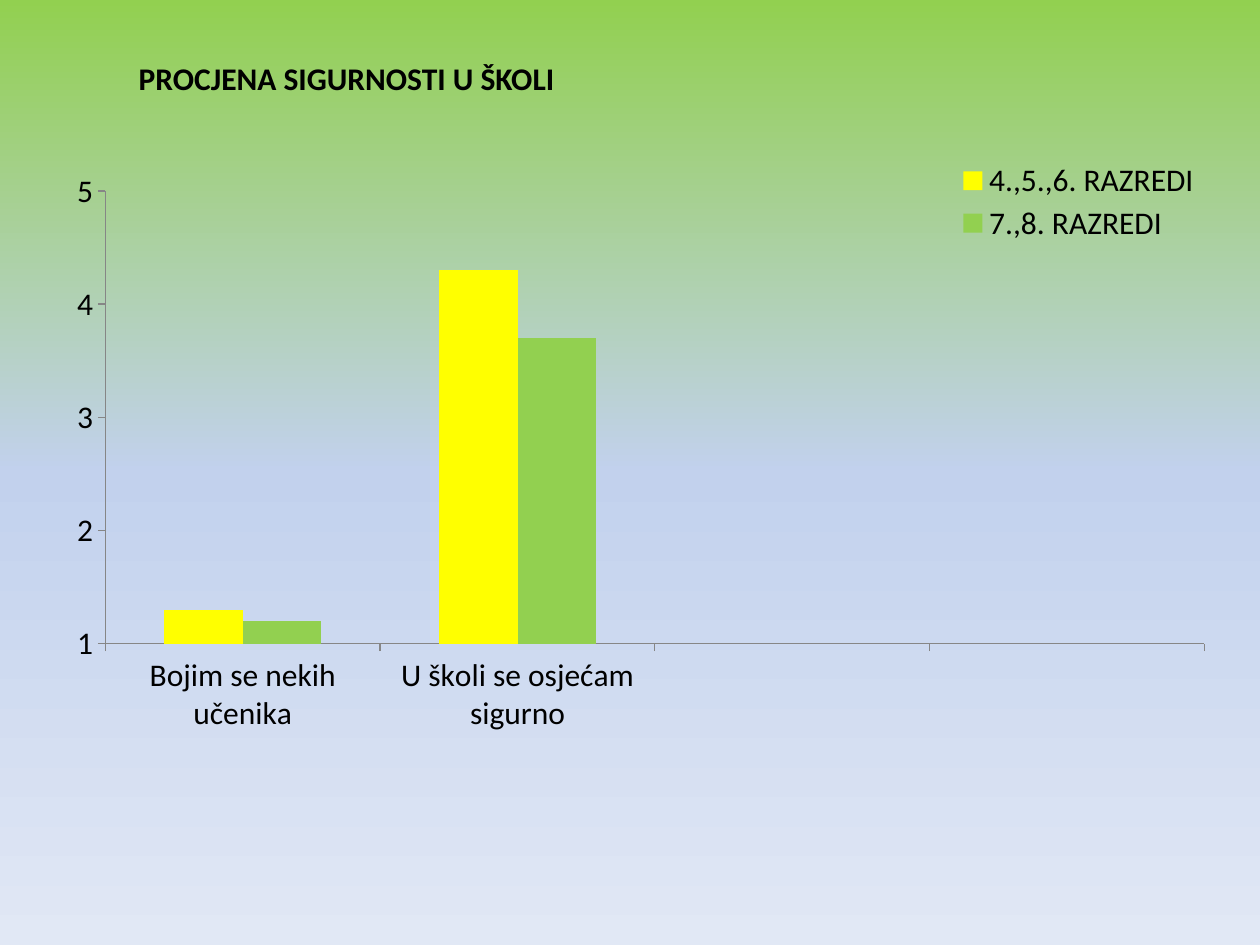
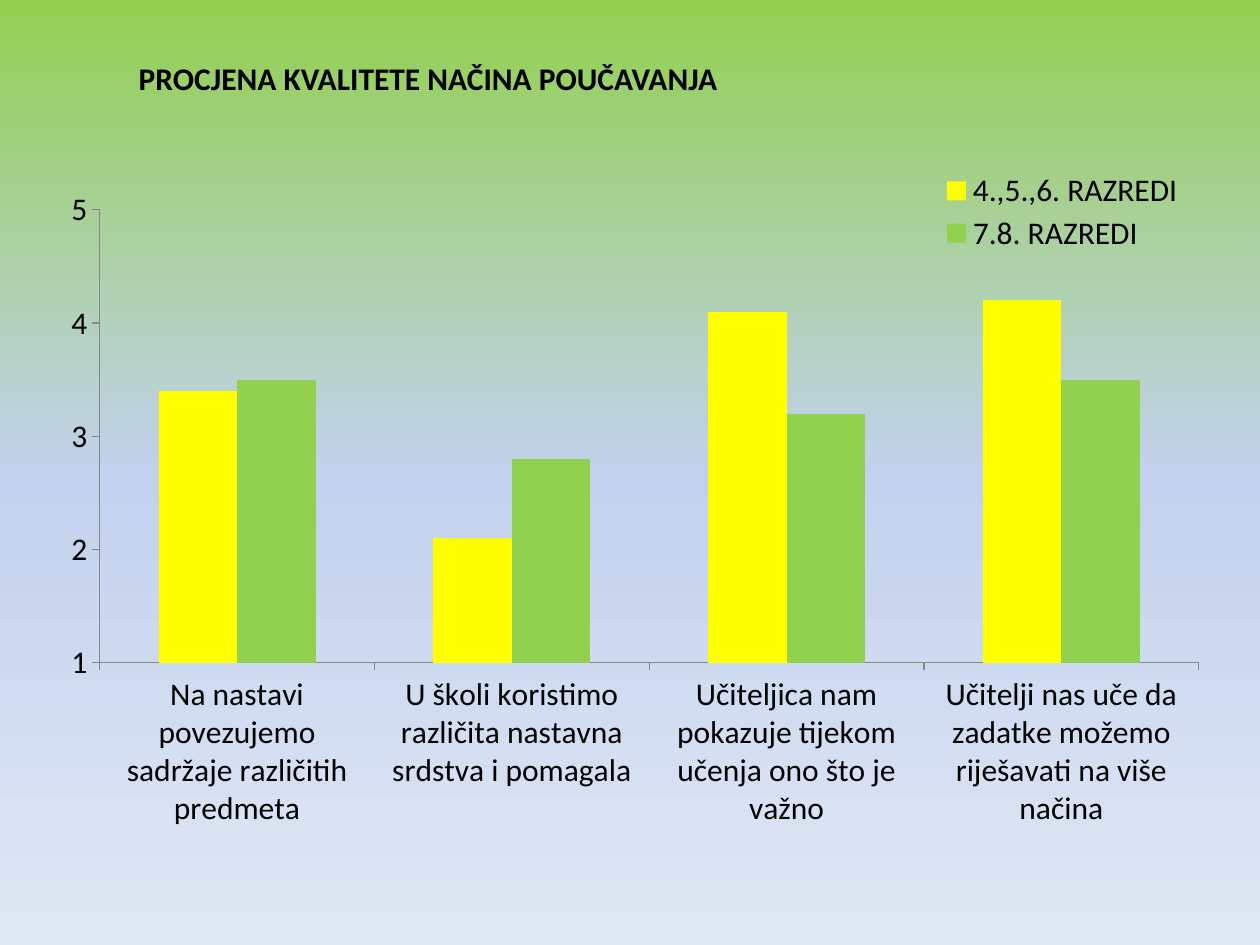
from copy import deepcopy

from pptx import Presentation
from pptx.chart.data import CategoryChartData
from pptx.dml.color import RGBColor
from pptx.enum.chart import XL_CHART_TYPE, XL_LEGEND_POSITION, XL_TICK_MARK
from pptx.enum.text import MSO_ANCHOR, MSO_AUTO_SIZE, PP_ALIGN
from pptx.oxml import parse_xml
from pptx.oxml.ns import nsdecls, qn
from pptx.util import Inches, Pt

COLUMN_CLUSTERED = XL_CHART_TYPE.COLUMN_CLUSTERED
LEGEND_RIGHT = XL_LEGEND_POSITION.RIGHT
TICK_OUTSIDE, TICK_NONE = XL_TICK_MARK.OUTSIDE, XL_TICK_MARK.NONE

BLACK = RGBColor(0x00, 0x00, 0x00)
AXIS_GRAY = RGBColor(0x86, 0x86, 0x86)
YELLOW = RGBColor(0xFF, 0xFF, 0x00)
GREEN = RGBColor(0x92, 0xD0, 0x50)
SKY_BLUE = RGBColor(0xC2, 0xD1, 0xED)
PALE_BLUE = RGBColor(0xE1, 0xE8, 0xF5)

BACKGROUND_STOPS = [(0, GREEN), (0.5, SKY_BLUE), (1, PALE_BLUE)]
SERIES_COLORS = [YELLOW, GREEN]
FONT_NAME, FONT_SIZE = "Calibri", Pt(18)

# Fractions of the chart area
PLOT_WIDTH, PLOT_HEIGHT = 0.926, 0.663
LEGEND_AREA = (0.74, 0, 0.24, 0.13)

# The first slide keeps two unused places on its category axis
SLIDES = [
    {
        "title": "PROCJENA SIGURNOSTI U ŠKOLI",
        "chart_position": (0.46, 1.25),
        "plot_position": (0.04, 0.049),
        "categories": ["Bojim se nekih učenika", "U školi se osjećam sigurno", "", ""],
        "series": {
            "4.,5.,6. RAZREDI": [1.3, 4.3, None, None],
            "7.,8. RAZREDI": [1.2, 3.7, None, None],
        },
    },
    {
        "title": "PROCJENA KVALITETE NAČINA POUČAVANJA",
        "chart_position": (0.33, 1.33),
        "plot_position": (0.049, 0.062),
        "categories": [
            "Na nastavi povezujemo sadržaje različitih predmeta",
            "U školi koristimo različita nastavna srdstva i pomagala",
            "Učiteljica nam pokazuje tijekom učenja ono što je važno",
            "Učitelji nas uče da zadatke možemo riješavati na više načina",
        ],
        "series": {
            "4.,5.,6. RAZREDI": [3.4, 2.1, 4.1, 4.2],
            "7.8. RAZREDI": [3.5, 2.8, 3.2, 3.5],
        },
    },
]


def set_background(master):
    """Give all slides the vertical three-colour gradient."""
    fill = master.background.fill
    fill.gradient()
    fill.gradient_angle = 270
    stop_list = master.element.find(".//" + qn("p:bgPr")).find(".//" + qn("a:gsLst"))
    stop_list.append(deepcopy(stop_list[0]))
    for stop, (position, color) in zip(fill.gradient_stops, BACKGROUND_STOPS):
        stop.position = position
        stop.color.rgb = color


def style_font(font, bold=False):
    font.name = FONT_NAME
    font.size = FONT_SIZE
    font.bold = bold
    font.color.rgb = BLACK


def set_title(slide, text):
    title = slide.shapes.title
    title.left, title.top = Inches(1), Inches(0.42)
    title.width, title.height = Inches(8.33), Inches(0.4)
    text_frame = title.text_frame
    text_frame.text = text
    text_frame.word_wrap = True
    text_frame.auto_size = MSO_AUTO_SIZE.SHAPE_TO_FIT_TEXT
    text_frame.vertical_anchor = MSO_ANCHOR.TOP
    paragraph = text_frame.paragraphs[0]
    paragraph.alignment = PP_ALIGN.LEFT
    style_font(paragraph.runs[0].font, bold=True)


def make_layout(left, top, width, height, target=""):
    """Return a manual layout for a part of a chart."""
    return parse_xml(
        f'<c:layout {nsdecls("c")}><c:manualLayout>{target}'
        '<c:xMode val="edge"/><c:yMode val="edge"/>'
        f'<c:x val="{left}"/><c:y val="{top}"/>'
        f'<c:w val="{width}"/><c:h val="{height}"/>'
        "</c:manualLayout></c:layout>"
    )


def remove_layout(element):
    for layout in element.findall(qn("c:layout")):
        element.remove(layout)


def place_plot(chart, position):
    plot_area = chart.element.find(".//" + qn("c:plotArea"))
    remove_layout(plot_area)
    inner = '<c:layoutTarget val="inner"/>'
    plot_area.insert(0, make_layout(*position, PLOT_WIDTH, PLOT_HEIGHT, inner))


def add_legend(chart):
    chart.has_legend = True
    chart.legend.position = LEGEND_RIGHT
    chart.legend.include_in_layout = True
    legend = chart.element.find(".//" + qn("c:legend"))
    remove_layout(legend)
    legend.find(qn("c:overlay")).addprevious(make_layout(*LEGEND_AREA))


def style_axes(chart):
    for axis in (chart.category_axis, chart.value_axis):
        axis.has_major_gridlines = False
        axis.major_tick_mark = TICK_OUTSIDE
        axis.minor_tick_mark = TICK_NONE
        axis.format.line.color.rgb = AXIS_GRAY
        axis.format.line.width = Pt(0.75)
    value_axis = chart.value_axis
    value_axis.minimum_scale, value_axis.maximum_scale = 1, 5
    value_axis.major_unit = 1


def add_column_chart(slide, content):
    chart_data = CategoryChartData()
    chart_data.categories = content["categories"]
    for name, values in content["series"].items():
        chart_data.add_series(name, values)
    left, top = content["chart_position"]
    chart = slide.shapes.add_chart(
        COLUMN_CLUSTERED, Inches(left), Inches(top), Inches(9.42), Inches(5.42), chart_data
    ).chart
    chart.has_title = False
    style_font(chart.font)
    style_axes(chart)

    # Columns
    plot = chart.plots[0]
    plot.gap_width, plot.overlap = 150, 0
    plot.vary_by_categories = False
    for series, color in zip(plot.series, SERIES_COLORS):
        series.format.fill.solid()
        series.format.fill.fore_color.rgb = color

    add_legend(chart)
    place_plot(chart, content["plot_position"])


def main():
    presentation = Presentation()
    presentation.slide_width, presentation.slide_height = Inches(10), Inches(7.5)
    set_background(presentation.slide_master)
    title_only = presentation.slide_layouts.get_by_name("Title Only")
    for content in SLIDES:
        slide = presentation.slides.add_slide(title_only)
        set_title(slide, content["title"])
        add_column_chart(slide, content)
    presentation.save("out.pptx")


if __name__ == "__main__":
    main()
